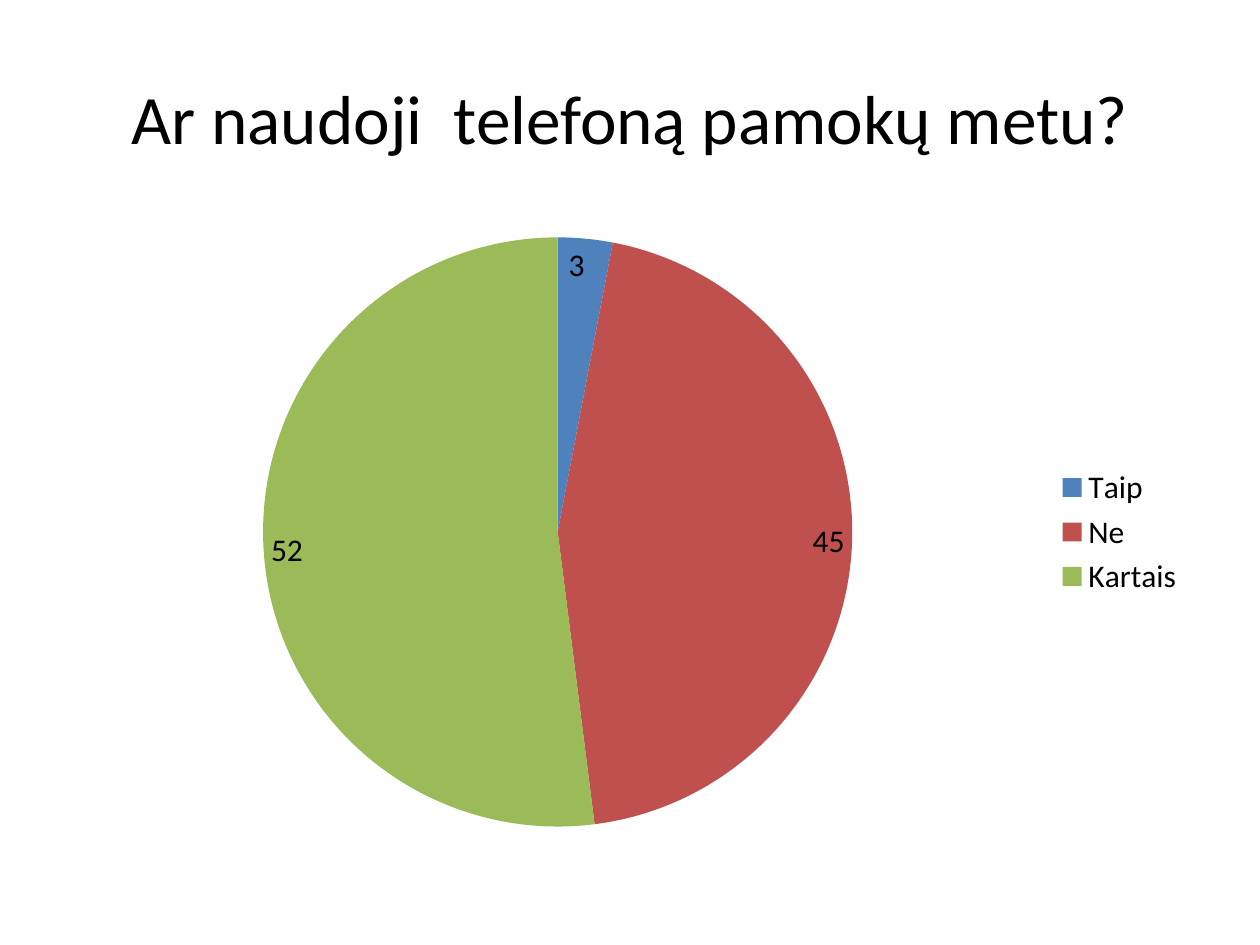
from pptx import Presentation
from pptx import util as u
from pptx.chart.data import CategoryChartData
from pptx.dml.color import RGBColor
from pptx.enum import chart as ch, text

# Content
TITLE = "Ar naudoji  telefoną pamokų metu?"
ANSWERS = [("Taip", 3, "4F81BD"), ("Ne", 45, "C0504D"), ("Kartais", 52, "9BBB59")]
FONT, INK = "Calibri", "000000"

# Geometry in px, 126 to the inch
PX = u.Inches(1) // 126
SLIDE = (1260, 945)
TITLE_BOX = (63, 38, 1134, 157)
CHART_BOX = (63, 220, 1134, 624)


def emu(*lengths):
    return [n * PX for n in lengths]


def rgb(value):
    return RGBColor.from_string(value)


def style(font, size):
    font.name, font.size = FONT, u.Pt(size)
    font.color.rgb = rgb(INK)


prs = Presentation()
prs.slide_width, prs.slide_height = emu(*SLIDE)
s = prs.slides.add_slide(prs.slide_layouts[6])

# Title
tf = s.shapes.add_textbox(*emu(*TITLE_BOX)).text_frame
tf.word_wrap = True
tf.vertical_anchor = text.MSO_ANCHOR.MIDDLE
p = tf.paragraphs[0]
p.alignment = text.PP_ALIGN.CENTER
r = p.add_run()
r.text = TITLE
style(r.font, 39.6)

# Pie chart
data = CategoryChartData()
data.categories = [name for name, _, _ in ANSWERS]
data.add_series("Series 1", [count for _, count, _ in ANSWERS])
chart = s.shapes.add_chart(ch.XL_CHART_TYPE.PIE, *emu(*CHART_BOX), data).chart
style(chart.font, 18)
chart.has_title = False
chart.has_legend = True
chart.legend.position = ch.XL_LEGEND_POSITION.RIGHT
chart.legend.include_in_layout = False

plot = chart.plots[0]
plot.vary_by_categories = True
for i, (_, _, color) in enumerate(ANSWERS):
    fill = plot.series[0].points[i].format.fill
    fill.solid()
    fill.fore_color.rgb = rgb(color)

# Value labels
labels = plot.series[0].data_labels
labels.show_value = True
labels.position = ch.XL_LABEL_POSITION.INSIDE_END
style(labels.font, 18)

prs.save("out.pptx")
